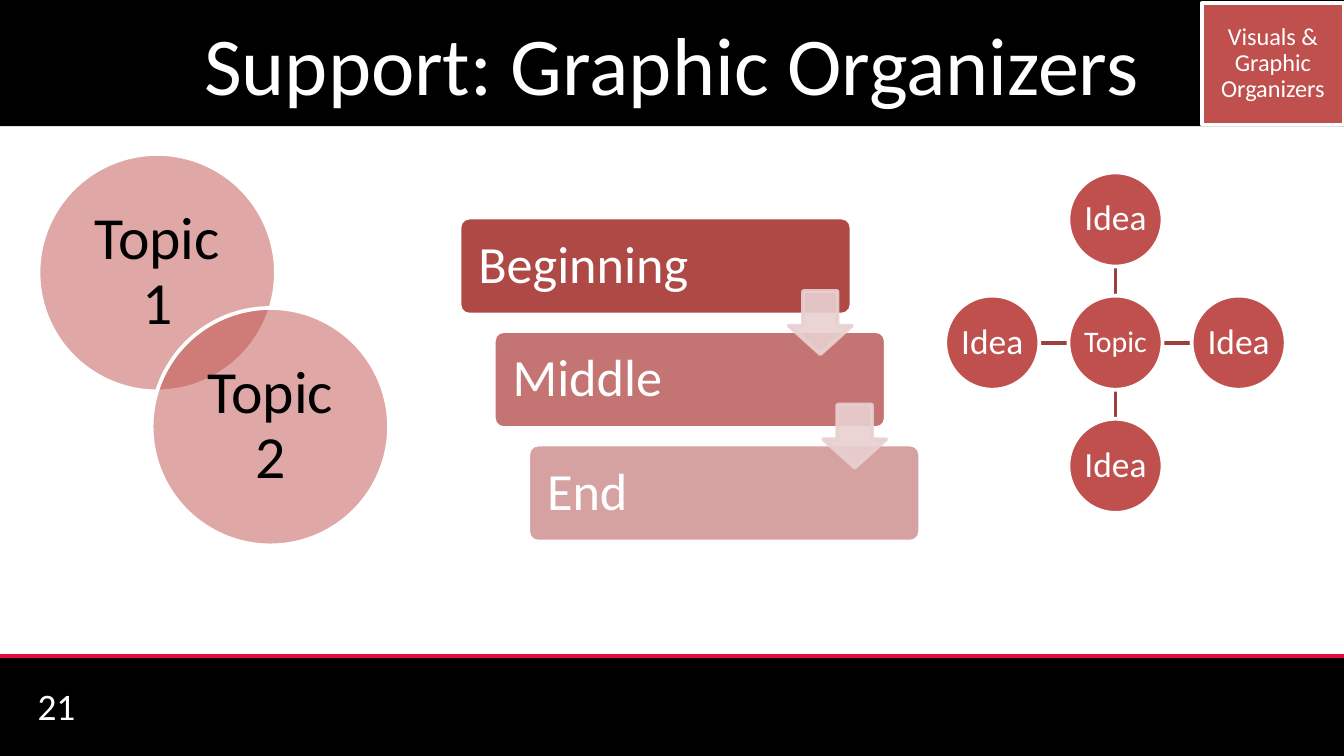
"""Build the "Support: Graphic Organizers" slide."""
from lxml import etree
from pptx import Presentation
from pptx.dml import color
from pptx.enum import shapes, text
from pptx.oxml import ns
from pptx.util import Pt

rgb = color.RGBColor.from_string
Kind = shapes.MSO_SHAPE
Align = text.PP_ALIGN
WHITE, BLACK, RED = "FFFFFF", "000000", "C0504D"


def add_block(kind, box, fill, outline=None, opacity=None, adjustments=()):
    block = slide.shapes.add_shape(kind, *map(Pt, box))
    block.shadow.inherit = False
    for index, value in enumerate(adjustments):
        block.adjustments[index] = value
    block.fill.solid()
    block.fill.fore_color.rgb = rgb(fill)
    if outline:
        block.line.color.rgb = rgb(outline)
        block.line.width = Pt(2)
    else:
        block.line.fill.background()
    if opacity:
        for tint in block.element.iter(ns.qn("a:srgbClr")):
            if str(tint.get("val")) == fill:
                etree.SubElement(tint, ns.qn("a:alpha"), val=str(opacity * 1000))
    return block


def write(holder, words, size, ink=WHITE, align=Align.CENTER, inset=1, spacing=0.9):
    frame = holder.text_frame
    frame.word_wrap = True
    frame.vertical_anchor = text.MSO_ANCHOR.MIDDLE
    frame.margin_left = frame.margin_right = Pt(inset)
    frame.margin_top = frame.margin_bottom = Pt(inset)
    paragraph = frame.paragraphs[0]
    paragraph.alignment = align
    paragraph.line_spacing = spacing
    run = paragraph.add_run()
    run.text = words
    run.font.name = "Calibri"
    run.font.size = Pt(size)
    run.font.color.rgb = rgb(ink)


deck = Presentation()
deck.slide_width, deck.slide_height = Pt(720), Pt(405)
slide = deck.slides.add_slide(deck.slide_layouts[6])

add_block(Kind.RECTANGLE, (0, 351.4, 720, 53.6), BLACK)
page_number = slide.shapes.add_textbox(Pt(13), Pt(367.2), Pt(168), Pt(21.6))
write(page_number, "21", 20, align=Align.LEFT, inset=7.2, spacing=1)

hub_x, hub_y, radius, reach = 597.6, 183.6, 25.2, 66
rules = [(0, 351.4, 720, 351.4, "E20D38")]
ideas = [(0, -1), (1, 0), (0, 1), (-1, 0)]
for dx, dy in ideas:
    near, far = radius, reach - radius
    rules.append((hub_x + dx * near, hub_y + dy * near,
                  hub_x + dx * far, hub_y + dy * far, "9A403E"))
for *ends, ink in rules:
    rule = slide.shapes.add_connector(shapes.MSO_CONNECTOR.STRAIGHT, *map(Pt, ends))
    rule.line.color.rgb = rgb(ink)
    rule.line.width = Pt(2)
    etree.SubElement(rule.element.spPr, ns.qn("a:effectLst"))

for dx, dy in [(0, 0)] + ideas:
    box = (hub_x + dx * reach - radius, hub_y + dy * reach - radius, 2 * radius, 2 * radius)
    bubble = add_block(Kind.OVAL, box, RED, WHITE)
    if dx or dy:
        write(bubble, "Idea", 19)
    else:
        write(bubble, "Topic", 16)

step_x, step_y = 18.4, 60.8
stages = [("Beginning", "AE4946"), ("Middle", "C47472"), ("End", "D6A2A1")]
for i, (stage, fill) in enumerate(stages):
    box = (246.2 + i * step_x, 116.6 + i * step_y, 210, 52)
    step = add_block(Kind.ROUNDED_RECTANGLE, box, fill, WHITE, adjustments=[0.1])
    write(step, stage, 28, align=Align.LEFT, inset=8.6)
for i in range(len(stages) - 1):
    box = (422.6 + i * step_x, 156 + i * step_y, 33.8, 33.8)
    add_block(Kind.DOWN_ARROW, box, "E8D0D0", "E8D0D0", 90, [0.55, 0.45])

for topic, left, top in [("Topic 1", 20.6, 82.5), ("Topic 2", 81.2, 165)]:
    circle = add_block(Kind.OVAL, (left, top, 127.2, 127.2), RED, WHITE, 50)
    write(circle, topic, 32, BLACK, inset=9.4)

title = add_block(Kind.RECTANGLE, (0, 0, 720, 67.6), BLACK)
write(title, "Support: Graphic Organizers", 44, inset=3.6, spacing=1)
tag = add_block(Kind.RECTANGLE, (643.8, 1.5, 76.2, 65.3), RED, WHITE)
write(tag, "Visuals & Graphic Organizers", 13)

deck.save("out.pptx")
